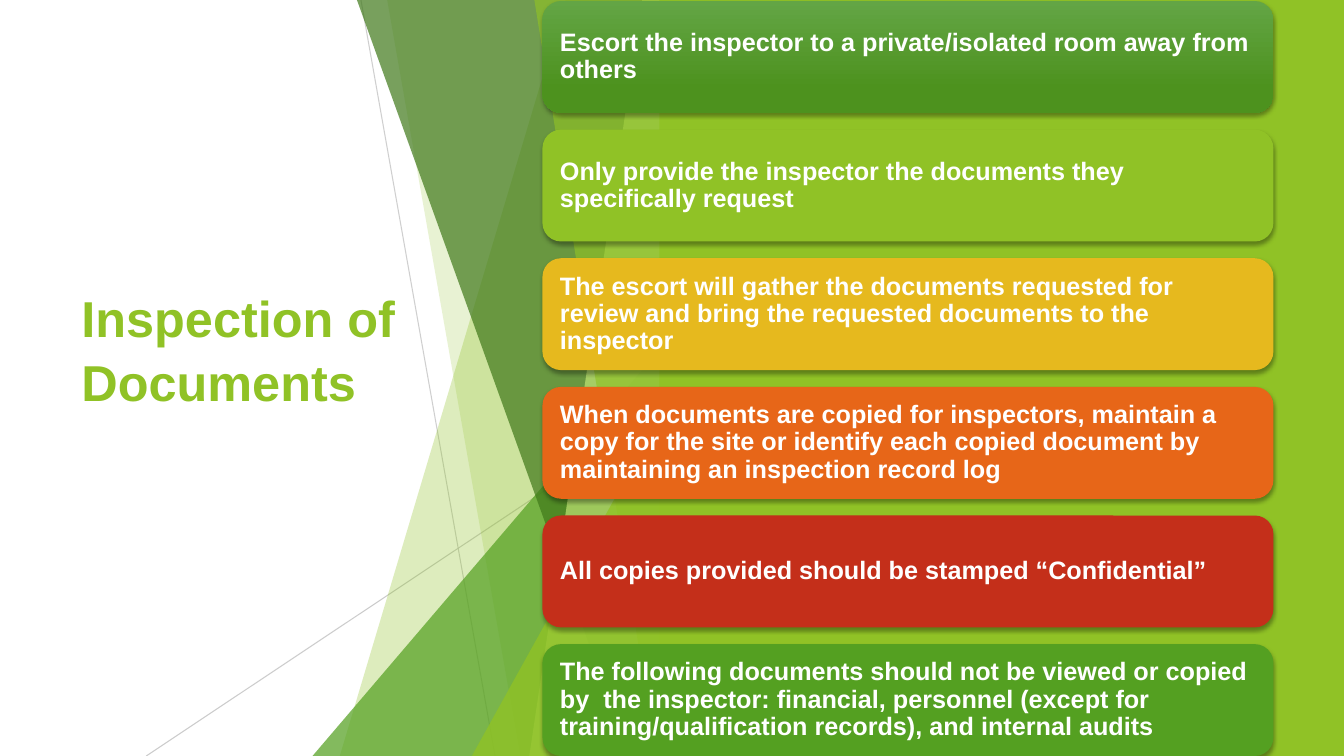
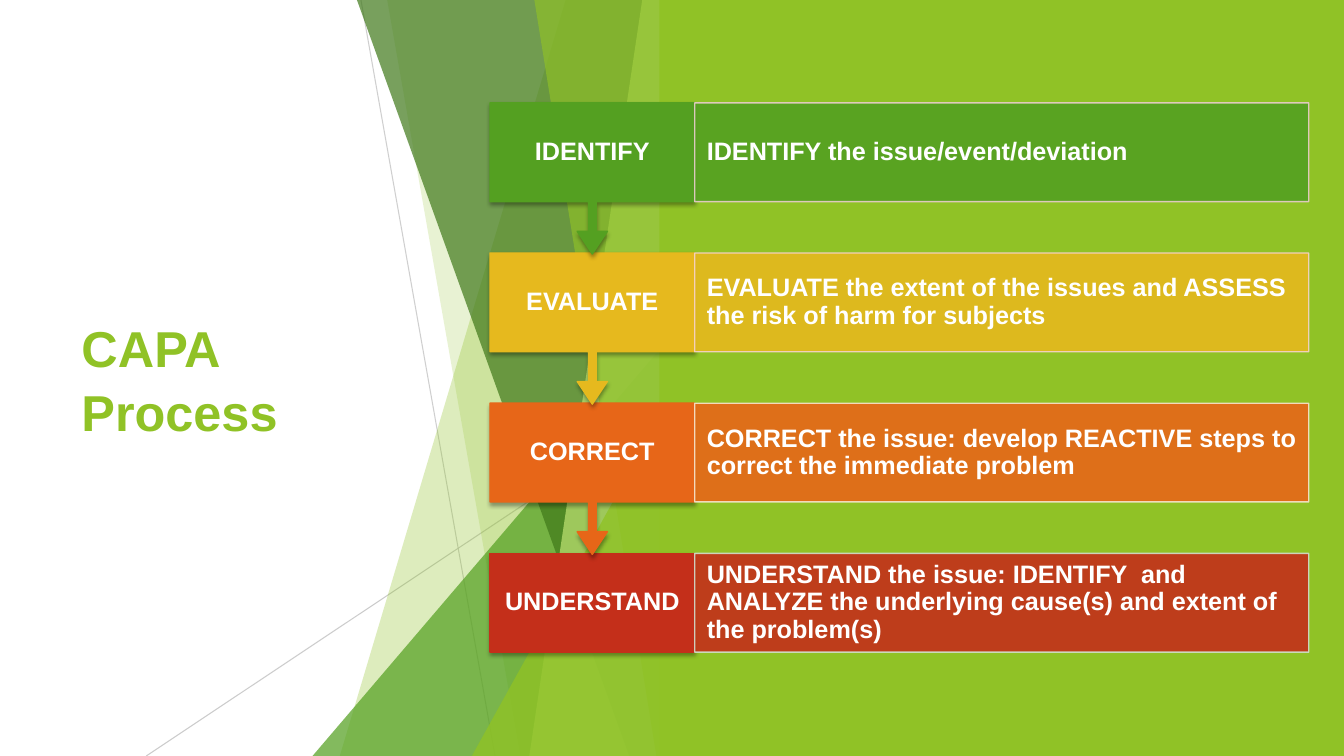
from lxml import etree
from pptx import Presentation
from pptx.dml.color import RGBColor
from pptx.enum.shapes import MSO_CONNECTOR, MSO_SHAPE
from pptx.enum.text import MSO_ANCHOR, PP_ALIGN
from pptx.oxml import parse_xml
from pptx.oxml.ns import nsdecls, qn
from pptx.util import Inches, Pt

RECTANGLE, ROUNDED = MSO_SHAPE.RECTANGLE, MSO_SHAPE.ROUNDED_RECTANGLE
TRIANGLE, CALLOUT = MSO_SHAPE.ISOSCELES_TRIANGLE, MSO_SHAPE.DOWN_ARROW_CALLOUT
STRAIGHT = MSO_CONNECTOR.STRAIGHT
MIDDLE, LEFT, CENTER = MSO_ANCHOR.MIDDLE, PP_ALIGN.LEFT, PP_ALIGN.CENTER

FONT = "Arial"
WHITE, GREY = "FFFFFF", "BFBFBF"
LIME, PALE_LIME = "90C226", "C0E474"
GREEN, DARK_GREEN = "54A021", "3F7819"
YELLOW, ORANGE, RED = "E6B91E", "E76618", "C42F1A"

SLIDE_W, SLIDE_H = 13.33, 7.5
BAND_LEFT = 6.54
FACET_RIGHT = 6.66


def paint(fill, colour, opacity=100):
    """Make a fill solid, with opacity in percent."""
    fill.solid()
    fill.fore_color.rgb = RGBColor.from_string(colour)
    if opacity < 100:
        srgb = fill._xPr.find(f"{qn('a:solidFill')}/{qn('a:srgbClr')}")
        etree.SubElement(srgb, qn("a:alpha"), val=str(opacity * 1000))


def add_panel(slide, preset, box, colour, opacity=100, text="", align=LEFT, raised=False):
    """Add a filled shape with bold white text; a raised one casts a soft shadow."""
    panel = slide.shapes.add_shape(preset, *map(Inches, box))
    paint(panel.fill, colour, opacity)
    panel.line.fill.background()
    panel.shadow.inherit = False
    if raised:
        panel._element.spPr.find(qn("a:effectLst")).append(parse_xml(
            f'<a:outerShdw {nsdecls("a")} blurRad="{Pt(3)}" dist="{Pt(2)}" dir="5400000" '
            'rotWithShape="0"><a:srgbClr val="000000"><a:alpha val="35000"/></a:srgbClr>'
            '</a:outerShdw>'))
    if text:
        frame = panel.text_frame
        frame.text = text
        frame.word_wrap = True
        frame.vertical_anchor = MIDDLE
        frame.margin_left = frame.margin_right = Inches(0.12)
        paragraph = frame.paragraphs[0]
        paragraph.alignment = align
        paragraph.line_spacing = 0.9
        font = paragraph.runs[0].font
        font.name, font.size, font.bold = FONT, Pt(18), True
        font.color.rgb = RGBColor.from_string(WHITE)
    return panel


prs = Presentation()
prs.slide_width, prs.slide_height = Inches(SLIDE_W), Inches(SLIDE_H)
blank = prs.slide_layouts[6]

# Shared backdrop and titles
# Thin lines: start x, start y, end x, opacity; all end at the bottom edge
thin_lines = [(3.58, 0, 4.91, 75), (FACET_RIGHT, 4.03, 1.45, 80)]
# Facets: top x, top y, bottom x, colour, opacity; all share one right edge
facets = [
    (5.61, 0, 3.37, LIME, 30),
    (3.84, 0, 5.16, LIME, 20),
    (FACET_RIGHT, 3.33, 3.1, GREEN, 72),
    (3.54, 0, 6.24, DARK_GREEN, 70),
    (6.37, 0, 5.25, PALE_LIME, 70),
    (5.3, 0, 6.51, LIME, 65),
    (FACET_RIGHT, 3.93, 4.68, LIME, 80),
]
titles = [("Inspection of Documents", 1.21, 3.88), ("CAPA Process", 1.51, 2.82)]

slides = []
for title, title_top, title_width in titles:
    slide = prs.slides.add_slide(blank)
    slides.append(slide)

    heading = slide.shapes.add_textbox(
        Inches(0.71), Inches(title_top), Inches(title_width), Inches(4.48)).text_frame
    heading.text = title
    heading.word_wrap = True
    heading.vertical_anchor = MIDDLE
    heading.paragraphs[0].line_spacing = 1.05
    font = heading.paragraphs[0].runs[0].font
    font.name, font.size, font.bold = FONT, Pt(36), True
    font.color.rgb = RGBColor.from_string(LIME)

    for start_x, start_y, end_x, opacity in thin_lines:
        thin_line = slide.shapes.add_connector(
            STRAIGHT, *map(Inches, (start_x, start_y, end_x, SLIDE_H)))
        paint(thin_line.line.fill, GREY, opacity)
        thin_line.line.width = Pt(0.75)
        etree.SubElement(thin_line._element.spPr, qn("a:effectLst"))

    for top_x, top_y, bottom_x, colour, opacity in facets:
        if top_x == FACET_RIGHT:
            box = (bottom_x, top_y, FACET_RIGHT - bottom_x, SLIDE_H - top_y)
            add_panel(slide, TRIANGLE, box, colour, opacity).adjustments[0] = 1
            continue
        outline = slide.shapes.build_freeform(Inches(top_x), Inches(top_y))
        outline.add_line_segments([
            (Inches(x), Inches(y)) for x, y in
            [(FACET_RIGHT, top_y), (FACET_RIGHT, SLIDE_H), (bottom_x, SLIDE_H)]])
        facet = outline.convert_to_shape()
        paint(facet.fill, colour, opacity)
        facet.line.fill.background()
        facet.shadow.inherit = False

    add_panel(slide, RECTANGLE, (BAND_LEFT, 0, SLIDE_W - BAND_LEFT, SLIDE_H), LIME)

inspection, capa = slides

# Inspection rules: equal cards from top to bottom edge
rules = [
    ("Escort the inspector to a private/isolated room away from others", GREEN),
    ("Only provide the inspector the documents they specifically request", LIME),
    ("The escort will gather the documents requested for review and bring the requested "
     "documents to the inspector", YELLOW),
    ("When documents are copied for inspectors, maintain a copy for the site or identify "
     "each copied document by maintaining an inspection record log", ORANGE),
    ("All copies provided should be stamped “Confidential”", RED),
    ("The following documents should not be viewed or copied by  the inspector: financial, "
     "personnel (except for training/qualification records), and internal audits", GREEN),
]
CARD_HEIGHT = 1.11
card_pitch = (SLIDE_H - 0.01 - CARD_HEIGHT) / (len(rules) - 1)
for row, (rule, colour) in enumerate(rules):
    card = add_panel(inspection, ROUNDED, (5.38, 0.01 + row * card_pitch, 7.25, CARD_HEIGHT),
                     colour, text=rule, raised=True)
    if row == 0:
        card.fill.gradient()
        card.fill.gradient_angle = 270
        for stop, (position, shade) in zip(card.fill.gradient_stops,
                                           [(0, "63A545"), (0.78, "4D921E")]):
            stop.position = position
            stop.color.rgb = RGBColor.from_string(shade)

# CAPA steps: each arrow overlaps the step below, so the last row goes first
steps = [
    ("IDENTIFY", "IDENTIFY the issue/event/deviation", GREEN, "EACDCD"),
    ("EVALUATE", "EVALUATE the extent of the issues and ASSESS the risk of harm for subjects",
     YELLOW, "F6D3CC"),
    ("CORRECT", "CORRECT the issue: develop REACTIVE steps to correct the immediate problem",
     ORANGE, "F5E6CD"),
    ("UNDERSTAND", "UNDERSTAND the issue: IDENTIFY  and ANALYZE the underlying cause(s) "
     "and extent of the problem(s)", RED, "D1DFCD"),
]
STEP_LEFT, STEP_WIDTH, STEP_HEIGHT = 4.86, 2.03, 0.98
STEP_TOP, STEP_PITCH, CALLOUT_HEIGHT = 1.02, 1.49, 1.5
last_row = len(steps) - 1
for row, (name, detail, colour, border) in reversed(list(enumerate(steps))):
    top = STEP_TOP + row * STEP_PITCH
    preset, height = (RECTANGLE, STEP_HEIGHT) if row == last_row else (CALLOUT, CALLOUT_HEIGHT)
    step = add_panel(capa, preset, (STEP_LEFT, top, STEP_WIDTH, height), colour,
                     text=name, align=CENTER, raised=True)
    if preset == CALLOUT:
        for index, share in enumerate((0.05, 0.1, 0.15, STEP_HEIGHT / CALLOUT_HEIGHT)):
            step.adjustments[index] = share
    explanation = add_panel(capa, RECTANGLE, (STEP_LEFT + STEP_WIDTH, top, 6.09, STEP_HEIGHT),
                            colour, 90, text=detail)
    for panel, edge, opacity in ((step, colour, 100), (explanation, border, 90)):
        paint(panel.line.fill, edge, opacity)
        panel.line.width = Pt(1)

prs.save("out.pptx")
